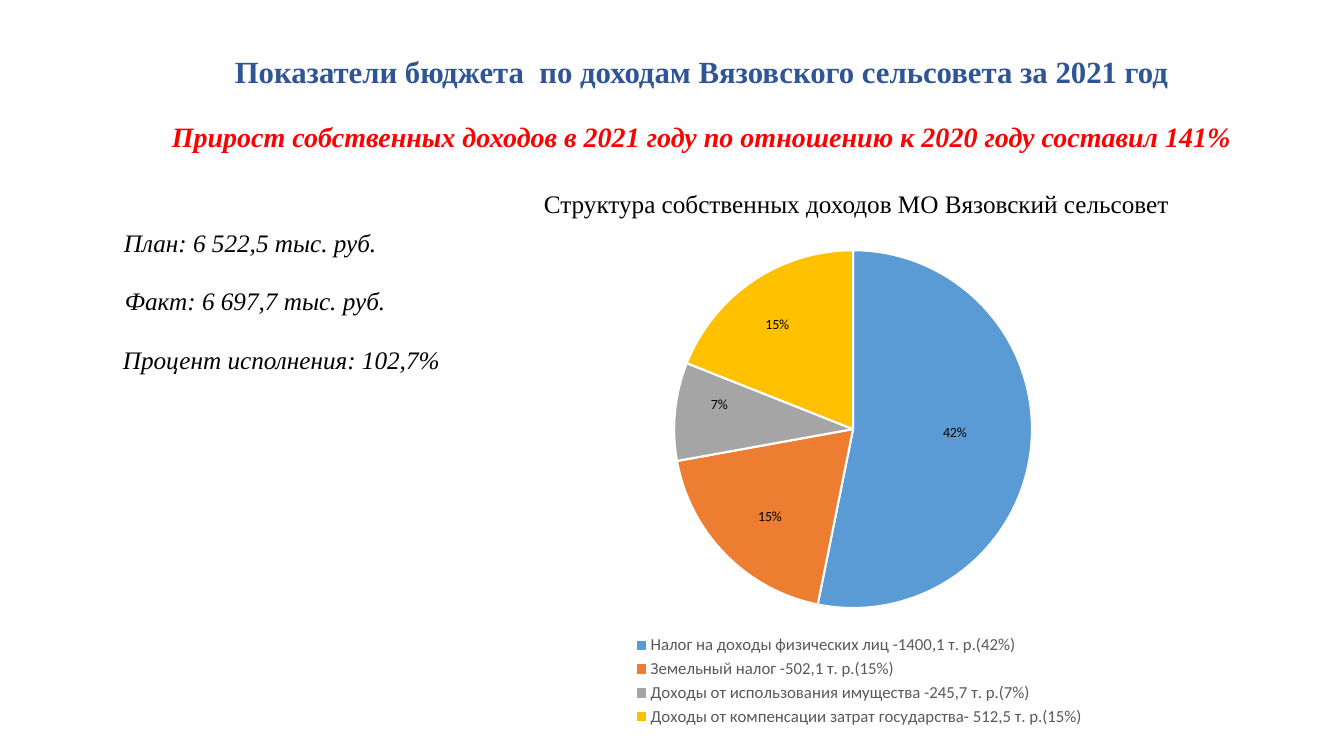
from dataclasses import dataclass

import pptx
import pptx.chart.data
import pptx.dml.color
import pptx.enum.chart
import pptx.enum.text
import pptx.oxml
import pptx.oxml.ns
import pptx.util

EMU_PER_PX = 12192000 / 1344
SERIF = "Times New Roman"
SANS = "Calibri"
BLACK = pptx.dml.color.RGBColor(0x00, 0x00, 0x00)
WHITE = pptx.dml.color.RGBColor(0xFF, 0xFF, 0xFF)
NAVY = pptx.dml.color.RGBColor(0x2F, 0x55, 0x97)
RED = pptx.dml.color.RGBColor(0xFF, 0x00, 0x00)
LEGEND_GREY = pptx.dml.color.RGBColor(0x59, 0x59, 0x59)
BLUE = pptx.dml.color.RGBColor(0x5B, 0x9B, 0xD5)
ORANGE = pptx.dml.color.RGBColor(0xED, 0x7D, 0x31)
GREY = pptx.dml.color.RGBColor(0xA5, 0xA5, 0xA5)
GOLD = pptx.dml.color.RGBColor(0xFF, 0xC0, 0x00)


@dataclass(frozen=True)
class Box:
    left: int
    top: int
    width: int
    height: int


@dataclass(frozen=True)
class Line:
    text: str
    size: int = 18
    color: pptx.dml.color.RGBColor = BLACK
    bold: bool = False
    italic: bool = False
    space_before: int = 0


@dataclass(frozen=True)
class Income:
    label: str
    share: float
    color: pptx.dml.color.RGBColor
    label_dx: int
    label_dy: int


HEADING = [
    Line("Показатели бюджета  по доходам Вязовского сельсовета за 2021 год", 22, NAVY, bold=True),
    Line("Прирост собственных доходов в 2021 году по отношению к 2020 году составил 141%",
         20, RED, bold=True, italic=True, space_before=21),
]
FIGURES = [
    (Box(114, 222, 317, 40), "План: 6 522,5 тыс. руб."),
    (Box(115, 280, 317, 40), "Факт: 6 697,7 тыс. руб."),
    (Box(113, 339, 340, 40), "Процент исполнения: 102,7%"),
]
INCOMES = [
    Income("Налог на доходы физических лиц -1400,1 т. р.(42%)", 0.42, BLUE, 12, -6),
    Income("Земельный налог -502,1 т. р.(15%)", 0.15, ORANGE, -21, 23),
    Income("Доходы от использования имущества -245,7 т. р.(7%)", 0.07, GREY, -47, -14),
    Income("Доходы от компенсации затрат государства- 512,5 т. р.(15%)", 0.15, GOLD, -24, -31),
]
CHART = Box(540, 228, 639, 503)
PIE = Box(136, 20, 361, 361)


def px(length: int) -> pptx.util.Emu:
    return pptx.util.Emu(round(length * EMU_PER_PX))


def place(box: Box) -> tuple:
    return px(box.left), px(box.top), px(box.width), px(box.height)


def add_text(slide, box: Box, lines: list[Line], align=pptx.enum.text.PP_ALIGN.LEFT):
    frame = slide.shapes.add_textbox(*place(box)).text_frame
    frame.word_wrap = True
    frame.text = "\n".join(line.text for line in lines)
    for paragraph, line in zip(frame.paragraphs, lines):
        paragraph.alignment = align
        if line.space_before:
            paragraph.space_before = pptx.util.Pt(line.space_before)
        for run in paragraph.runs:
            set_font(run.font, SERIF, line.size, line.color)
            run.font.bold = line.bold
            run.font.italic = line.italic
    return frame


def set_font(font, name: str, size: int, color: pptx.dml.color.RGBColor) -> None:
    font.name = name
    font.size = pptx.util.Pt(size)
    font.color.rgb = color


def manual_layout(settings: dict):
    items = "".join(f'<c:{tag} val="{value}"/>' for tag, value in settings.items())
    return pptx.oxml.parse_xml(
        f'<c:layout {pptx.oxml.ns.nsdecls("c")}><c:manualLayout>{items}</c:manualLayout></c:layout>')


def add_income_pie(slide) -> None:
    income_data = pptx.chart.data.CategoryChartData(number_format="0%")
    income_data.categories = [income.label for income in INCOMES]
    income_data.add_series("Series 1", [income.share for income in INCOMES])
    chart = slide.shapes.add_chart(
        pptx.enum.chart.XL_CHART_TYPE.PIE, *place(CHART), income_data).chart
    chart.has_title = False
    set_font(chart.font, SANS, 10, BLACK)
    chart.has_legend = True
    chart.legend.position = pptx.enum.chart.XL_LEGEND_POSITION.BOTTOM
    chart.legend.include_in_layout = False
    set_font(chart.legend.font, SANS, 12, LEGEND_GREY)

    plot = chart.plots[0]
    plot.vary_by_categories = True
    shares = plot.series[0]
    shares.data_labels.show_value = True
    shares.data_labels.number_format = "0%"
    shares.data_labels.number_format_is_linked = False
    set_font(shares.data_labels.font, SANS, 10, BLACK)
    for index, income in enumerate(INCOMES):
        slice_point = shares.points[index]
        slice_point.format.fill.solid()
        slice_point.format.fill.fore_color.rgb = income.color
        slice_point.format.line.color.rgb = WHITE
        slice_point.format.line.width = pptx.util.Pt(1.5)
        slice_point.data_label.position = pptx.enum.chart.XL_LABEL_POSITION.CENTER
        set_font(slice_point.data_label.font, SANS, 10, BLACK)

    chart_space = plot.chart.element if hasattr(plot, "chart") else chart.element
    for label, income in zip(chart_space.xpath(".//c:dLbl"), INCOMES):
        label.xpath("c:idx")[0].addnext(manual_layout({
            "x": round(income.label_dx / CHART.width, 2),
            "y": round(income.label_dy / CHART.height, 2)}))
    plot_area = chart_space.xpath(".//c:plotArea")[0]
    for automatic in plot_area.xpath("c:layout"):
        plot_area.remove(automatic)
    plot_area.insert(0, manual_layout({
        "layoutTarget": "inner", "xMode": "edge", "yMode": "edge",
        "x": round(PIE.left / CHART.width, 2), "y": round(PIE.top / CHART.height, 2),
        "w": round(PIE.width / CHART.width, 2), "h": round(PIE.height / CHART.height, 2)}))


def main() -> None:
    presentation = pptx.Presentation()
    presentation.slide_width = px(1344)
    presentation.slide_height = px(756)
    slide = presentation.slides.add_slide(presentation.slide_layouts[6])
    add_text(slide, Box(80, 48, 1243, 112), HEADING, pptx.enum.text.PP_ALIGN.CENTER)
    for box, figure in FIGURES:
        add_text(slide, box, [Line(figure, italic=True)])
    add_text(slide, Box(534, 183, 703, 40),
             [Line("Структура собственных доходов МО Вязовский сельсовет")])
    add_income_pie(slide)
    presentation.save("out.pptx")


if __name__ == "__main__":
    main()
